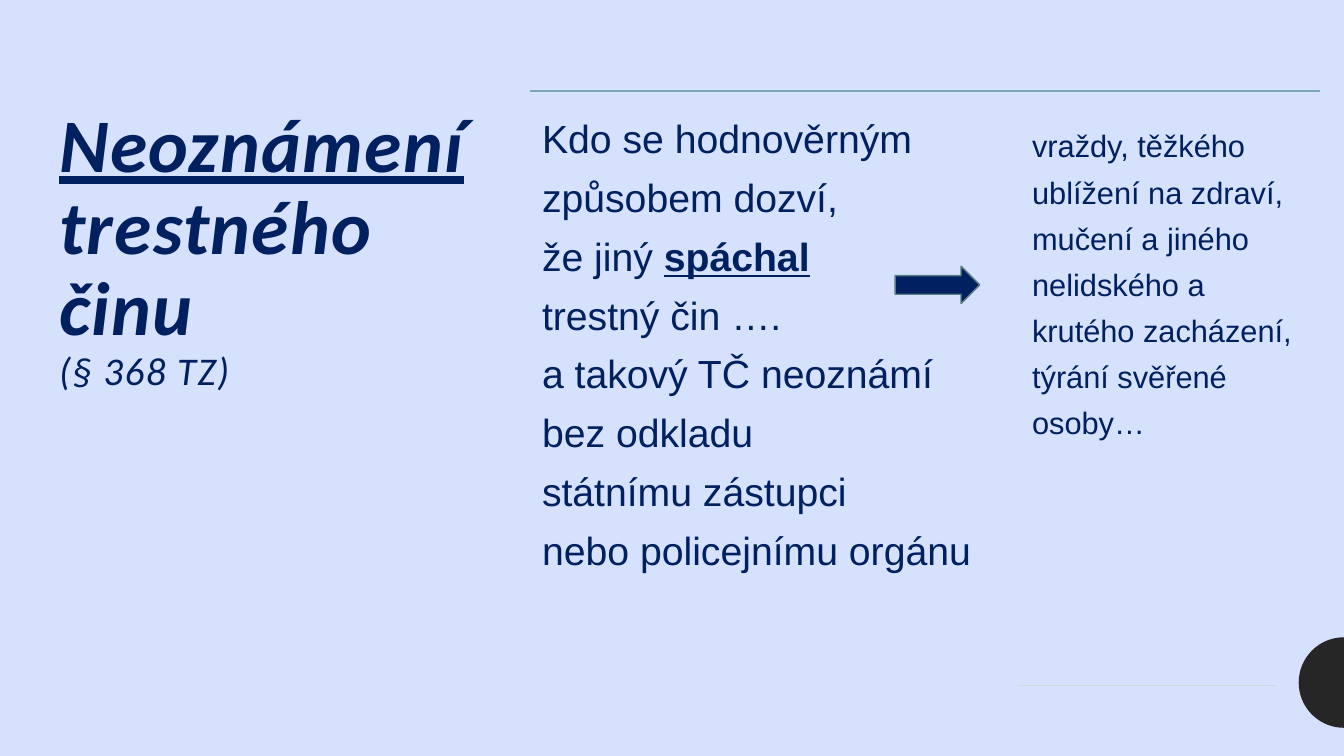
from math import cos, pi, sin

from lxml.etree import SubElement
from pptx import Presentation
from pptx.dml.color import RGBColor
from pptx.enum.shapes import MSO_CONNECTOR as Connector, MSO_SHAPE as Shape
from pptx.enum.text import MSO_ANCHOR as Anchor, MSO_AUTO_SIZE as AutoSize, PP_ALIGN as Align
from pptx.oxml.ns import qn
from pptx.util import Cm, Pt

PALE_BLUE = RGBColor(0xD6, 0xE1, 0xFE)
NAVY = RGBColor(0x00, 0x20, 0x60)
TEAL = RGBColor(0x7A, 0xA9, 0xB3)
PALE_TEAL = RGBColor(0xCB, 0xDA, 0xDD)
SLATE = RGBColor(0x5A, 0x7D, 0x84)
CHARCOAL = RGBColor(0x26, 0x26, 0x26)

WIDTH, HEIGHT = 33.87, 19.05
STRONG = {"bold": True, "underline": True}


def apply(target, formats):
    for name, value in formats.items():
        setattr(target, name, value)


class SlideBuilder:
    """Holds the shared style and the slide; lengths are in centimetres."""

    def __init__(self, slide):
        self.slide = slide
        self.font = {"bold": False, "italic": False, "underline": False}
        self.paragraph = {"alignment": Align.LEFT, "space_before": Pt(0), "space_after": Pt(0)}
        self.frame = {"word_wrap": True, "auto_size": AutoSize.NONE, "vertical_anchor": Anchor.TOP}

    def background(self, color):
        fill = self.slide.background.fill
        fill.solid()
        fill.fore_color.rgb = color

    def text(self, box, place, margins, paragraphs, spacing, font):
        """Each paragraph is a list of (text, font changes) spans."""
        apply(box, dict(zip(("left", "top", "width", "height"), map(Cm, place))))
        frame = box.text_frame
        apply(frame, self.frame)
        sides = ("margin_left", "margin_top", "margin_right", "margin_bottom")
        apply(frame, dict(zip(sides, map(Cm, margins))))
        for index, spans in enumerate(paragraphs):
            para = frame.add_paragraph() if index else frame.paragraphs[0]
            apply(para, {**self.paragraph, "line_spacing": spacing})
            properties = para._p.get_or_add_pPr()
            properties.set("marL", "0")
            properties.set("indent", "0")
            SubElement(properties, qn("a:buNone"))
            for words, changes in spans:
                if words == "\v":
                    para.add_line_break()
                    continue
                span = para.add_run()
                span.text = words
                apply(span.font, {**self.font, **font, **changes})
                span.font.color.rgb = NAVY

    def title(self, place, spans, font):
        box = self.slide.shapes.title
        self.text(box, place, (0.25, 0.13, 0.25, 0.13), [spans], 0.9, font)
        for span in box.text_frame.paragraphs[0].runs:
            span._r.get_or_add_rPr().set("spc", "100")

    def body(self, number, place, margins, paragraphs, size):
        font = {"name": "Arial", "size": Pt(size)}
        self.text(self.slide.placeholders[number], place, margins, paragraphs, 1.25, font)

    def rule(self, left, right, top, color):
        line = self.slide.shapes.add_connector(
            Connector.STRAIGHT, Cm(left), Cm(top), Cm(right), Cm(top))
        line.line.color.rgb = color
        line.line.width = Pt(1)
        SubElement(line._element.spPr, qn("a:effectLst"))

    def paint(self, shape, fill, outline=None):
        shape.shadow.inherit = False
        shape.fill.solid()
        shape.fill.fore_color.rgb = fill
        if outline is None:
            shape.line.fill.background()
        else:
            shape.line.color.rgb = outline
            shape.line.width = Pt(1)

    def arrow(self, place, fill, outline):
        shape = self.slide.shapes.add_shape(Shape.RIGHT_ARROW, *map(Cm, place))
        self.paint(shape, fill, outline)

    def half_disc(self, center_x, center_y, radius, color, steps=48):
        angles = [pi / 2 + pi * step / steps for step in range(steps + 1)]
        points = [(Cm(center_x + radius * cos(angle)), Cm(center_y + radius * sin(angle)))
                  for angle in angles]
        outline = self.slide.shapes.build_freeform(*points[0])
        outline.add_line_segments(points[1:], close=True)
        self.paint(outline.convert_to_shape(), color)


def main():
    deck = Presentation()
    deck.slide_width, deck.slide_height = Cm(WIDTH), Cm(HEIGHT)
    page = SlideBuilder(deck.slides.add_slide(deck.slide_layouts[3]))

    # Background and edge ornament
    page.background(PALE_BLUE)
    page.half_disc(WIDTH, 17.2, 1.14, CHARCOAL)

    # Title
    page.title(
        (1.24, 2.57, 11.63, 13.08),
        [("Neoznámení", {"underline": True}), (" trestného činu", {}), ("\v", {}),
         ("(§ 368 TZ)", {"size": Pt(28), "bold": False})],
        {"name": "Calibri", "size": Pt(54), "bold": True, "italic": True})

    # Definition of the offence
    page.rule(13.36, 33.27, 2.29, TEAL)
    page.body(1, (13.36, 2.29, 12.29, 15.49), (0.3, 0.3, 0.4, 0.3), [
        [("Kdo se hodnověrným způsobem dozví,", {})],
        [("že jiný ", {}), ("spáchal", STRONG), (" ", {})],
        [("trestný čin ….", {})],
        [("a takový TČ neoznámí bez odkladu", {})],
        [("státnímu zástupci", {})],
        [("nebo policejnímu orgánu", {})],
    ], 28)

    # Offences concerned
    page.body(2, (25.78, 2.74, 7.49, 14.53), (0.23, 0.23, 0.23, 0.23), [
        [("vraždy, těžkého ublížení na zdraví, mučení a jiného nelidského "
          "a krutého zacházení,", {})],
        [("týrání svěřené osoby…", {})],
    ], 22)
    page.rule(25.65, 32.16, 17.27, PALE_TEAL)
    page.arrow((22.56, 6.71, 2.13, 0.94), NAVY, SLATE)

    deck.save("out.pptx")


if __name__ == "__main__":
    main()
